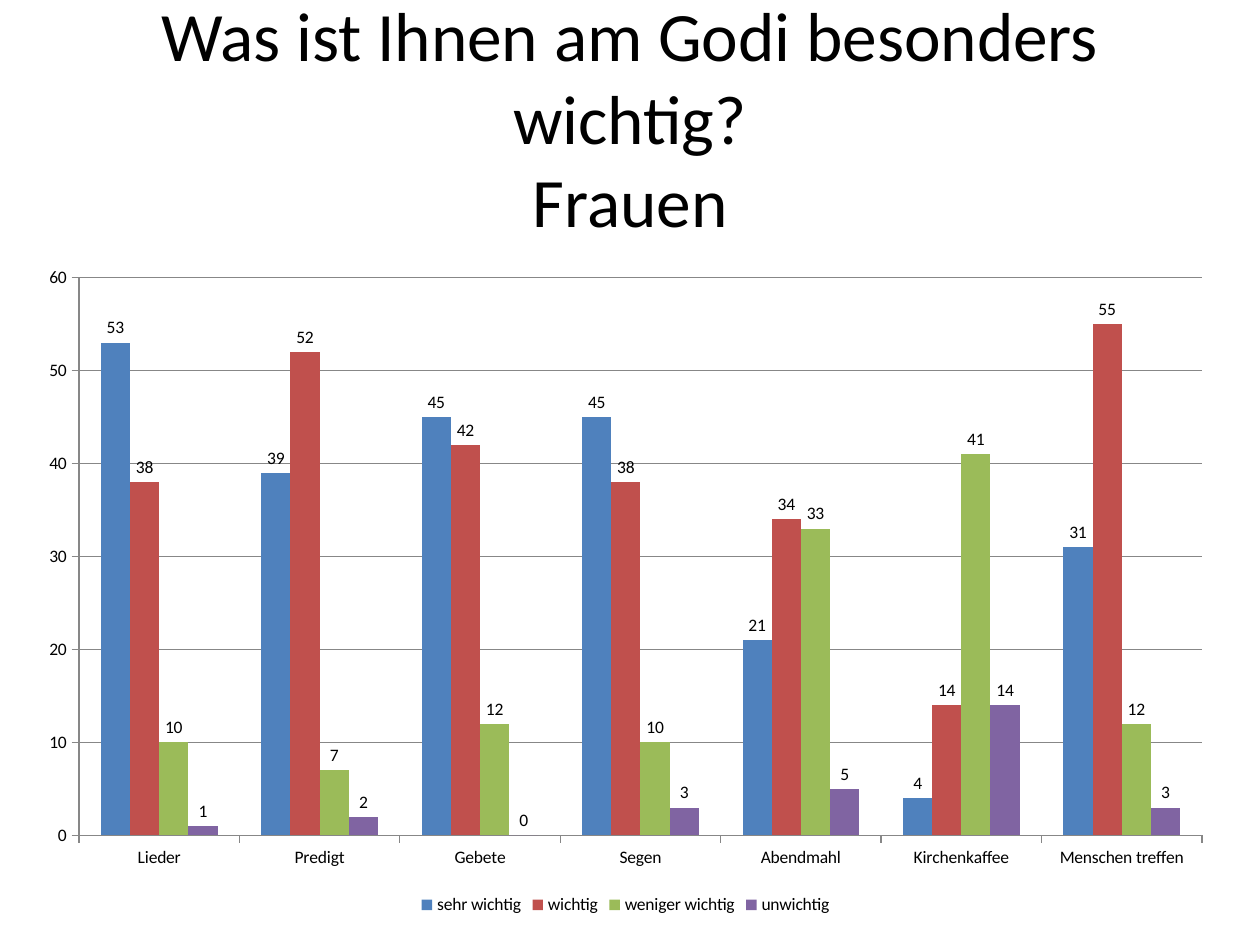
from dataclasses import dataclass

from pptx import Presentation
from pptx import util as u
from pptx.chart import data as chart_data
from pptx.dml import color
from pptx.enum import chart as chart_enum
from pptx.enum import text


@dataclass(frozen=True)
class Theme:
    font: str = "Calibri"
    title_size: float = 39.6
    chart_size: float = 10
    ink: str = "000000"
    grid: str = "878787"
    paper: str = "FFFFFF"
    series: tuple = ("4F81BD", "C0504D", "9BBB59", "8064A2")


TITLE_LINES = ("Was ist Ihnen am Godi besonders wichtig?", "Frauen")
CATEGORIES = ("Lieder", "Predigt", "Gebete", "Segen", "Abendmahl",
              "Kirchenkaffee", "Menschen treffen")
RATINGS = {
    "sehr wichtig": (53, 39, 45, 45, 21, 4, 31),
    "wichtig": (38, 52, 42, 38, 34, 14, 55),
    "weniger wichtig": (10, 7, 12, 10, 33, 41, 12),
    "unwichtig": (1, 2, 0, 3, 5, 14, 3),
}


def rgb(value):
    return color.RGBColor.from_string(value)


def format_font(font, *, name, size, ink):
    font.name = name
    font.size = u.Pt(size)
    font.color.rgb = rgb(ink)


def write_lines(para, lines, *, align, **style):
    para.alignment = align
    for index, line in enumerate(lines):
        if index:
            para.add_line_break()
        span = para.add_run()
        span.text = line
        format_font(span.font, **style)


class SlideBuilder:
    """Holds the theme and the current slide and adds elements to it."""

    def __init__(self, page, theme):
        self.page = page
        self.theme = theme
        page.background.fill.solid()
        page.background.fill.fore_color.rgb = rgb(theme.paper)

    def title(self, lines, left, top, width, height):
        box = self.page.shapes.add_textbox(*map(u.Pt, (left, top, width, height)))
        frame = box.text_frame
        frame.word_wrap = True
        frame.vertical_anchor = text.MSO_ANCHOR.MIDDLE
        write_lines(frame.paragraphs[0], lines, align=text.PP_ALIGN.CENTER,
                    name=self.theme.font, size=self.theme.title_size,
                    ink=self.theme.ink)

    def column_chart(self, categories, ratings, left, top, width, height):
        data = chart_data.CategoryChartData(number_format="0")
        data.categories = categories
        for name, values in ratings.items():
            data.add_series(name, values)
        chart = self.page.shapes.add_chart(
            chart_enum.XL_CHART_TYPE.COLUMN_CLUSTERED,
            *map(u.Pt, (left, top, width, height)), data).chart
        format_font(chart.font, name=self.theme.font,
                    size=self.theme.chart_size, ink=self.theme.ink)
        chart.has_title = False
        chart.has_legend = True
        chart.legend.position = chart_enum.XL_LEGEND_POSITION.BOTTOM
        chart.legend.include_in_layout = False
        self.axes(chart)
        self.columns(chart.plots[0])

    def axes(self, chart):
        values = chart.value_axis
        values.minimum_scale, values.maximum_scale, values.major_unit = 0, 60, 10
        values.has_major_gridlines = True
        lines = [values.major_gridlines.format.line]
        for axis in (chart.category_axis, values):
            axis.major_tick_mark = chart_enum.XL_TICK_MARK.OUTSIDE
            lines.append(axis.format.line)
        for line in lines:
            line.color.rgb = rgb(self.theme.grid)
            line.width = u.Pt(0.75)

    def columns(self, plot):
        plot.gap_width = 150
        plot.overlap = 0
        plot.vary_by_categories = False
        plot.has_data_labels = True
        plot.data_labels.show_value = True
        plot.data_labels.position = chart_enum.XL_LABEL_POSITION.OUTSIDE_END
        for series, fill in zip(plot.series, self.theme.series):
            series.invert_if_negative = False
            series.format.fill.solid()
            series.format.fill.fore_color.rgb = rgb(fill)


def main():
    deck = Presentation()
    deck.slide_width, deck.slide_height = u.Pt(720), u.Pt(540)
    builder = SlideBuilder(deck.slides.add_slide(deck.slide_layouts[6]), Theme())
    builder.title(TITLE_LINES, 36, 21.6, 648, 90)
    builder.column_chart(CATEGORIES, RATINGS, 14.4, 145.44, 686.16, 380.16)
    deck.save("out.pptx")


if __name__ == "__main__":
    main()
